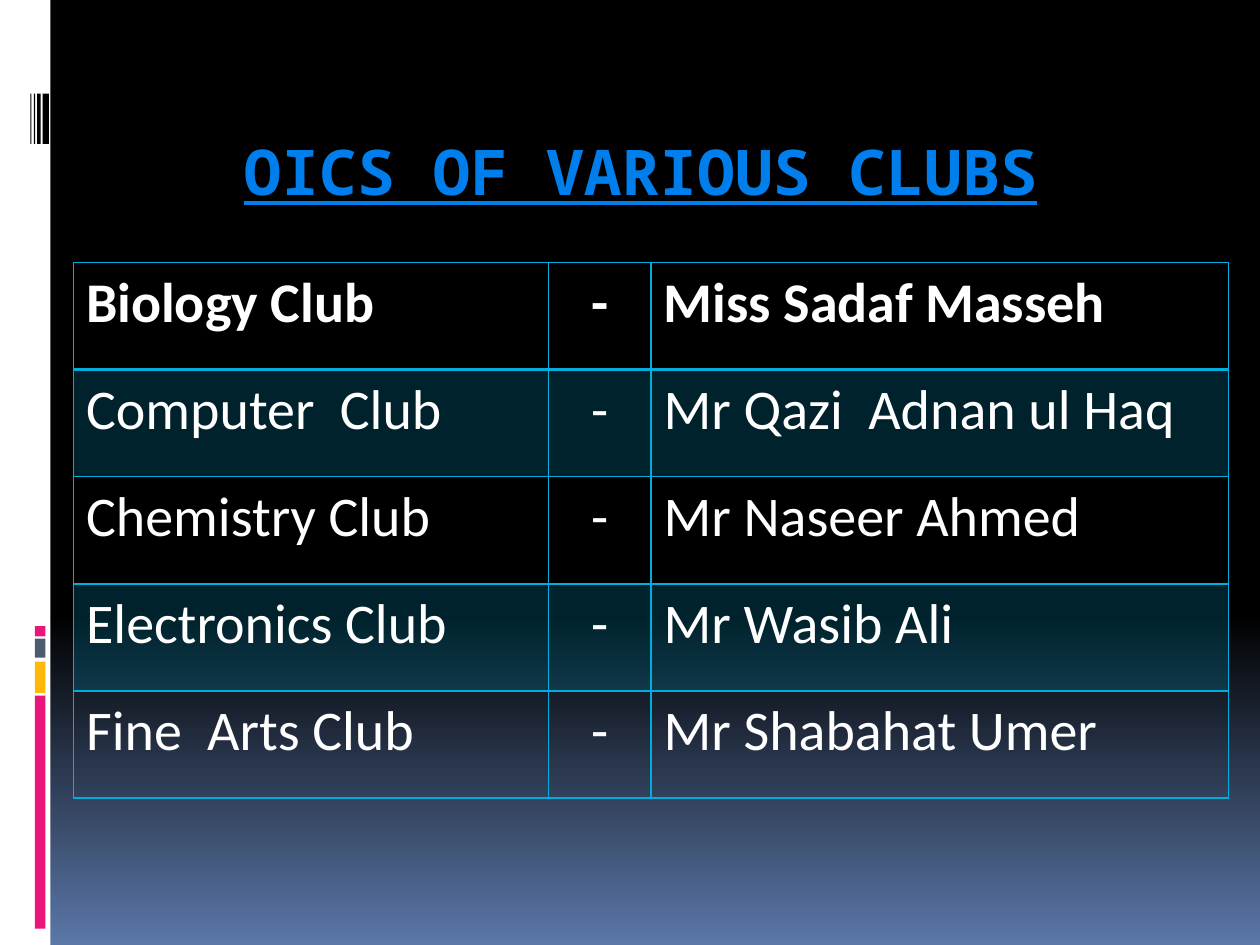
from lxml.etree import SubElement
from pptx import Presentation
from pptx.dml.color import RGBColor
from pptx.enum.shapes import MSO_SHAPE as Shape
from pptx.enum.text import PP_ALIGN as Align
from pptx.oxml.ns import qn
from pptx.util import Pt


def color(hex_code):
    return RGBColor.from_string(hex_code)


def add_run(paragraph, text, font_name, size, hex_code, bold):
    run = paragraph.add_run()
    run.text = text
    run.font.name = font_name
    run.font.size = Pt(size)
    run.font.bold = bold
    run.font.color.rgb = color(hex_code)
    return run


WHITE, BLACK, PINK, CYAN = "FFFFFF", "000000", "EA157A", "00ADDC"

prs = Presentation()
prs.slide_width, prs.slide_height = Pt(720), Pt(540)
slide = prs.slides.add_slide(prs.slide_layouts[6])

backdrop = slide.background.fill
backdrop.gradient()
backdrop.gradient_angle = 270
for stop, (position, shade) in zip(backdrop.gradient_stops, [(0.65, BLACK), (1, "5B77A8")]):
    stop.position = position
    stop.color.rgb = color(shade)

sidebar_bars = [
    (0, 0, 28.8, 540, WHITE),
    (24.4, 53.5, 3.6, 28.8, BLACK),
    (21.2, 53.5, 2, 28.8, BLACK),
    (19.4, 53.5, 0.8, 28.8, BLACK),
    (17.4, 53.5, 0.6, 28.8, BLACK),
    (20, 397.5, 6, 133.2, PINK),
    (20, 378, 6, 18, "FEB80A"),
    (20, 365, 6, 10.8, "4E5B6F"),
    (20, 357.8, 6, 5.8, PINK),
]
for left, top, width, height, shade in sidebar_bars:
    bar = slide.shapes.add_shape(Shape.RECTANGLE, Pt(left), Pt(top), Pt(width), Pt(height))
    bar.shadow.inherit = False
    bar.fill.solid()
    bar.fill.fore_color.rgb = color(shade)
    bar.line.fill.background()

title = slide.shapes.add_textbox(Pt(36), Pt(72), Pt(660), Pt(155.5)).text_frame
title.word_wrap = True
heading = title.paragraphs[0]
heading.alignment = Align.CENTER
add_run(heading, "OICS OF VARIOUS CLUBS", "Noto Sans Mono", 36, "007EEB", True).font.underline = True

officers = [
    ("Biology Club", "Miss Sadaf Masseh"),
    ("Computer  Club", "Mr Qazi  Adnan ul Haq"),
    ("Chemistry Club", "Mr Naseer Ahmed"),
    ("Electronics Club", "Mr Wasib Ali"),
    ("Fine  Arts Club", "Mr Shabahat Umer"),
]
widths = [271.5, 58.5, 330]
clubs = slide.shapes.add_table(
    len(officers), len(widths), Pt(42), Pt(150), Pt(sum(widths)), Pt(306)
).table
clubs.first_row = clubs.horz_banding = False
for column, width in zip(clubs.columns, widths):
    column.width = Pt(width)

for r, (club, officer) in enumerate(officers):
    clubs.rows[r].height = Pt(61.2)
    for c, text in enumerate([club, "-", officer]):
        cell = clubs.cell(r, c)
        paragraph = cell.text_frame.paragraphs[0]
        if c == 1:
            paragraph.alignment = Align.CENTER
        add_run(paragraph, text, "Calibri", 32, WHITE, r == 0)

        properties = cell._tc.get_or_add_tcPr()
        for side in ["lnL", "lnR", "lnT", "lnB"]:
            under_header = (r, side) in [(0, "lnB"), (1, "lnT")]
            border = SubElement(properties, qn(f"a:{side}"), w=str(Pt(2 if under_header else 1)))
            SubElement(SubElement(border, qn("a:solidFill")), qn("a:srgbClr"), val=CYAN)

        if r % 2:
            cell.fill.solid()
            cell.fill.fore_color.rgb = color(CYAN)
            tint = properties.find(qn("a:solidFill")).find(qn("a:srgbClr"))
            SubElement(tint, qn("a:alpha"), val="20000")
        else:
            cell.fill.background()

prs.save("out.pptx")
